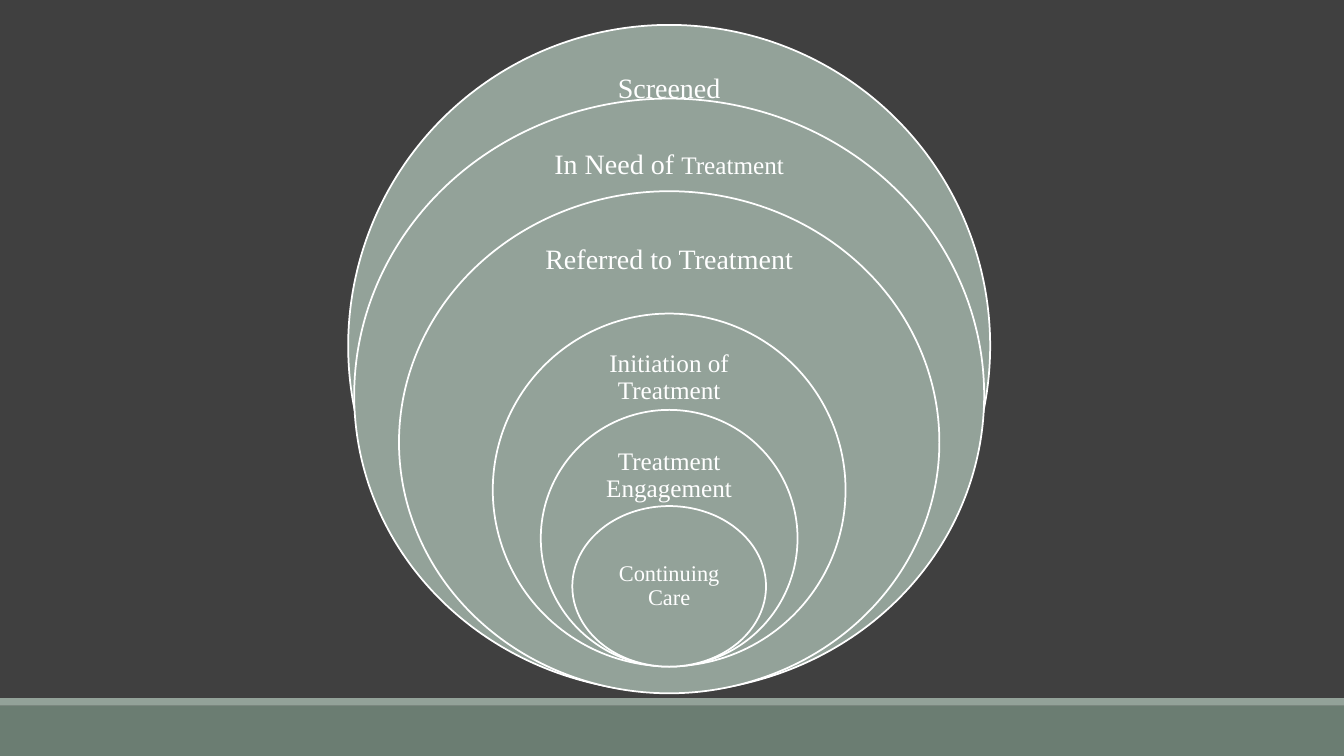
from dataclasses import dataclass

from pptx import Presentation
from pptx.dml.color import RGBColor
from pptx.enum.shapes import MSO_SHAPE
from pptx.enum.text import MSO_ANCHOR, PP_ALIGN
from pptx.shapes.autoshape import Shape
from pptx.util import Pt


@dataclass(frozen=True)
class Theme:
    back: RGBColor = RGBColor(0x40, 0x40, 0x40)
    base: RGBColor = RGBColor(0x6B, 0x7D, 0x72)
    sage: RGBColor = RGBColor(0x93, 0xA2, 0x99)
    white: RGBColor = RGBColor(0xFF, 0xFF, 0xFF)
    font: str = "Times New Roman"
    large: int = 20
    mid: int = 18
    small: int = 16
    edge: float = 1.25


@dataclass(frozen=True)
class Box:
    top: float
    width: float
    height: float


@dataclass(frozen=True)
class Ring:
    oval: Box
    label: Box
    inset: float
    runs: tuple[tuple[str, int], ...]


@dataclass(frozen=True)
class Band:
    box: Box
    color: RGBColor


THEME = Theme()
WIDTH, HEIGHT = 960, 540
CENTER = 478

BANDS = (
    Band(Box(504, WIDTH, 36), THEME.base),
    Band(Box(498.7, WIDTH, 5.3), THEME.sage),
)

RINGS = (
    Ring(Box(17.8, 458.6, 458.6), Box(41, 172, 46), 11.2,
         (("Screened", THEME.large),)),
    Ring(Box(70.4, 450, 424), Box(94.3, 194, 48), 11.2,
         (("In Need of ", THEME.large), ("Treatment", THEME.mid))),
    Ring(Box(136.6, 386, 358.6), Box(161.2, 199.4, 49.7), 11.2,
         (("Referred to Treatment", THEME.large),)),
    Ring(Box(224, 252, 252), Box(247, 136, 45.4), 10.1,
         (("Initiation of Treatment", THEME.mid),)),
    Ring(Box(292.8, 183.4, 183.4), Box(316, 119.5, 46), 10.1,
         (("Treatment", THEME.mid), (" ", THEME.large),
          ("Engagement", THEME.mid))),
    Ring(Box(361.5, 138.4, 114.7), Box(390.2, 98, 57.6), 9,
         (("Continuing Care", THEME.small),)),
)


def place(box: Box, center: float) -> tuple[Pt, Pt, Pt, Pt]:
    left = center - box.width / 2
    return Pt(left), Pt(box.top), Pt(box.width), Pt(box.height)


def paint(shape: Shape, color: RGBColor) -> None:
    shape.shadow.inherit = False
    shape.fill.solid()
    shape.fill.fore_color.rgb = color


def draw_band(shapes, band: Band) -> None:
    bar = shapes.add_shape(MSO_SHAPE.RECTANGLE, *place(band.box, WIDTH / 2))
    paint(bar, band.color)
    bar.line.fill.background()


def draw_ring(shapes, ring: Ring) -> None:
    oval = shapes.add_shape(MSO_SHAPE.OVAL, *place(ring.oval, CENTER))
    paint(oval, THEME.sage)
    oval.line.color.rgb = THEME.white
    oval.line.width = Pt(THEME.edge)

    frame = shapes.add_textbox(*place(ring.label, CENTER)).text_frame
    layout = {"word_wrap": True, "vertical_anchor": MSO_ANCHOR.MIDDLE}
    for side in ("left", "top", "right", "bottom"):
        layout[f"margin_{side}"] = Pt(ring.inset)
    for name, value in layout.items():
        setattr(frame, name, value)

    line = frame.paragraphs[0]
    for name, value in {"alignment": PP_ALIGN.CENTER, "line_spacing": 0.9}.items():
        setattr(line, name, value)
    for text, size in ring.runs:
        run = line.add_run()
        run.text = text
        for name, value in {"name": THEME.font, "size": Pt(size)}.items():
            setattr(run.font, name, value)
        run.font.color.rgb = THEME.white


def main() -> None:
    deck = Presentation()
    deck.slide_width, deck.slide_height = Pt(WIDTH), Pt(HEIGHT)
    slide = deck.slides.add_slide(deck.slide_layouts[6])
    slide.background.fill.solid()
    slide.background.fill.fore_color.rgb = THEME.back
    for band in BANDS:
        draw_band(slide.shapes, band)
    group = slide.shapes.add_group_shape()
    for ring in RINGS:
        draw_ring(group.shapes, ring)
    deck.save("out.pptx")


if __name__ == "__main__":
    main()
